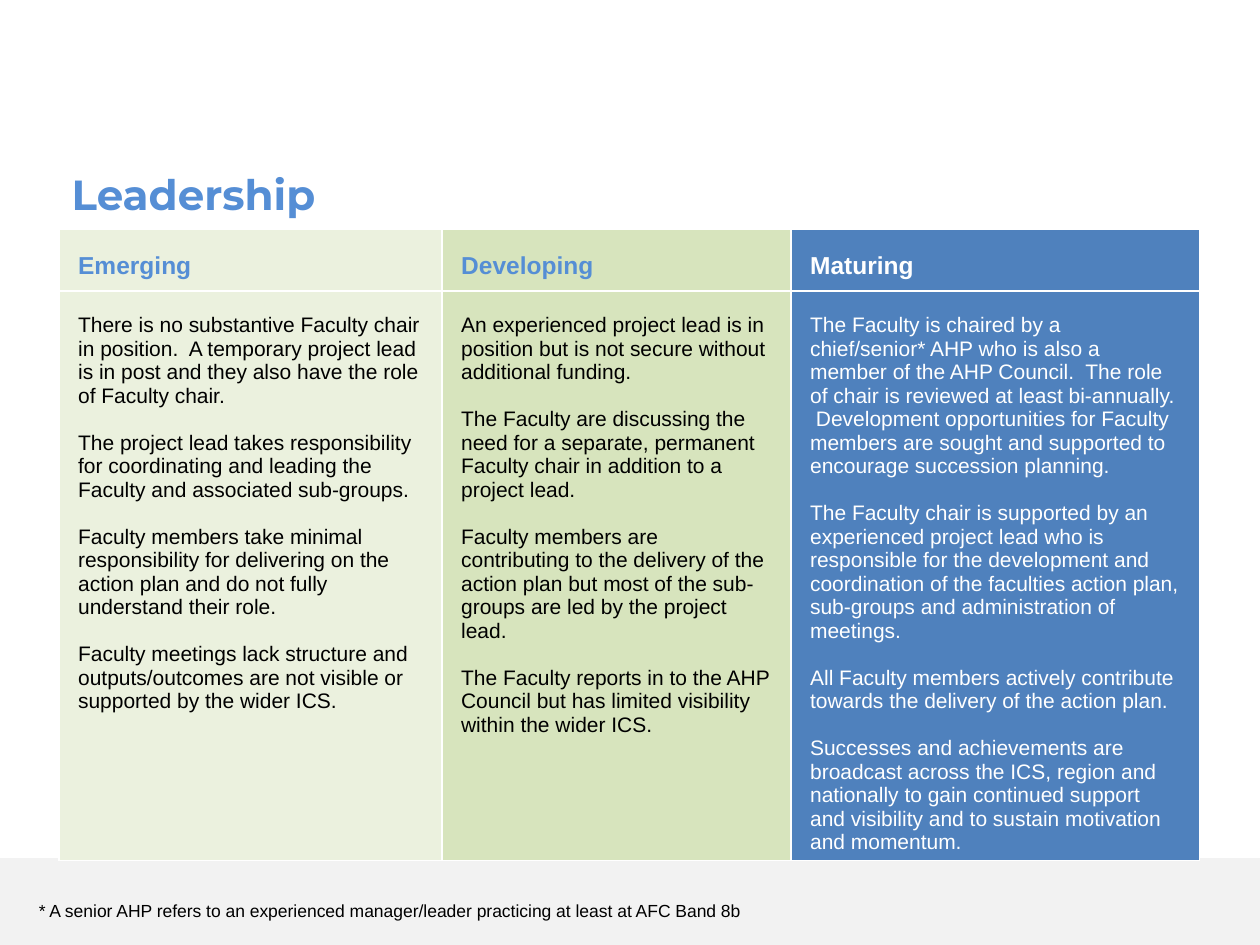
from lxml import etree
from pptx import Presentation
from pptx.dml.color import RGBColor
from pptx.enum import shapes, text
from pptx.oxml.ns import qn
from pptx.util import Inches, Pt

BLUE, BLACK, WHITE = "558ED5", "000000", "FFFFFF"

STAGES = [
    ("Emerging", 3.04, "EBF1DE", BLUE, BLACK, [
        "There is no substantive Faculty chair in position.  A temporary project lead is in post "
        "and they also have the role of Faculty chair.",
        "The project lead takes responsibility for coordinating and leading the Faculty and "
        "associated sub-groups.",
        "Faculty members take minimal responsibility for delivering on the action plan and do not "
        "fully understand their role.",
        "Faculty meetings lack structure and outputs/outcomes are not visible or supported by the "
        "wider ICS.",
    ]),
    ("Developing", 2.77, "D7E4BD", BLUE, BLACK, [
        "An experienced project lead is in position but is not secure without additional funding.",
        "The Faculty are discussing the need for a separate, permanent Faculty chair in addition "
        "to a project lead.",
        "Faculty members are contributing to the delivery of the action plan but most of the "
        "sub-groups are led by the project lead.",
        "The Faculty reports in to the AHP Council but has limited visibility within the wider ICS.",
    ]),
    ("Maturing", 3.24, "4F81BD", WHITE, WHITE, [
        "The Faculty is chaired by a chief/senior* AHP who is also a member of the AHP Council.  "
        "The role of chair is reviewed at least bi-annually.  Development opportunities for "
        "Faculty members are sought and supported to encourage succession planning.",
        "The Faculty chair is supported by an experienced project lead who is responsible for the "
        "development and coordination of the faculties action plan, sub-groups and administration "
        "of meetings.",
        "All Faculty members actively contribute towards the delivery of the action plan.",
        "Successes and achievements are broadcast across the ICS, region and nationally to gain "
        "continued support and visibility and to sustain motivation and momentum.",
    ]),
]


def rgb(color):
    return RGBColor.from_string(color)


def write(tf, lines, size, color, font="Arial", bold=False, gap=0):
    tf.text = "\n".join(lines)
    for i, p in enumerate(tf.paragraphs):
        if i and gap:
            p.space_before = Pt(gap)
        for r in p.runs:
            r.font.name = font
            r.font.size = Pt(size)
            r.font.bold = bold
            r.font.color.rgb = rgb(color)


def add_label(s, box, line, size, color, **style):
    tf = s.shapes.add_textbox(*map(Inches, box)).text_frame
    tf.word_wrap = False
    tf.auto_size = text.MSO_AUTO_SIZE.SHAPE_TO_FIT_TEXT
    write(tf, [line], size, color, **style)


def add_band(s, box, color):
    sp = s.shapes.add_shape(shapes.MSO_SHAPE.RECTANGLE, *map(Inches, box))
    sp.shadow.inherit = False
    sp.fill.solid()
    sp.fill.fore_color.rgb = rgb(color)
    sp.line.fill.background()


def set_borders(cell, color, width):
    tc_pr = cell._tc.get_or_add_tcPr()
    for i, side in enumerate(("lnL", "lnR", "lnT", "lnB")):
        ln = etree.Element(qn(f"a:{side}"), w=str(Pt(width)))
        fill = etree.SubElement(ln, qn("a:solidFill"))
        etree.SubElement(fill, qn("a:srgbClr"), val=color)
        tc_pr.insert(i, ln)


def fill_cell(cell, fill, lines, size, color, **style):
    cell.margin_left = cell.margin_right = Inches(0.15)
    cell.margin_top, cell.margin_bottom = Inches(0.18), Inches(0.04)
    cell.fill.solid()
    cell.fill.fore_color.rgb = rgb(fill)
    set_borders(cell, WHITE, 1)
    write(cell.text_frame, lines, size, color, **style)


def add_stages(s, box):
    table = s.shapes.add_table(2, len(STAGES), *map(Inches, box)).table
    for row, height in zip(table.rows, (0.49, 4.52)):
        row.height = Inches(height)
    for i, (name, width, fill, head_color, body_color, points) in enumerate(STAGES):
        table.columns[i].width = Inches(width)
        fill_cell(table.cell(0, i), fill, [name], 14, head_color, bold=True)
        fill_cell(table.cell(1, i), fill, points, 12, body_color, gap=13.4)


def main():
    prs = Presentation()
    prs.slide_width, prs.slide_height = Inches(10), Inches(7.5)
    s = prs.slides.add_slide(prs.slide_layouts[6])
    add_band(s, (0, 6.81, 10, 0.69), "F2F2F2")
    add_stages(s, (0.47, 1.82, 9.05, 5.01))
    add_label(s, (0.47, 1.29, 2.25, 0.5), "Leadership", 24, BLUE, font="Montserrat", bold=True)
    add_label(s, (0.21, 7.09, 5.88, 0.57),
              "* A senior AHP refers to an experienced manager/leader practicing at least at AFC Band 8b",
              10, BLACK)
    prs.save("out.pptx")


if __name__ == "__main__":
    main()
